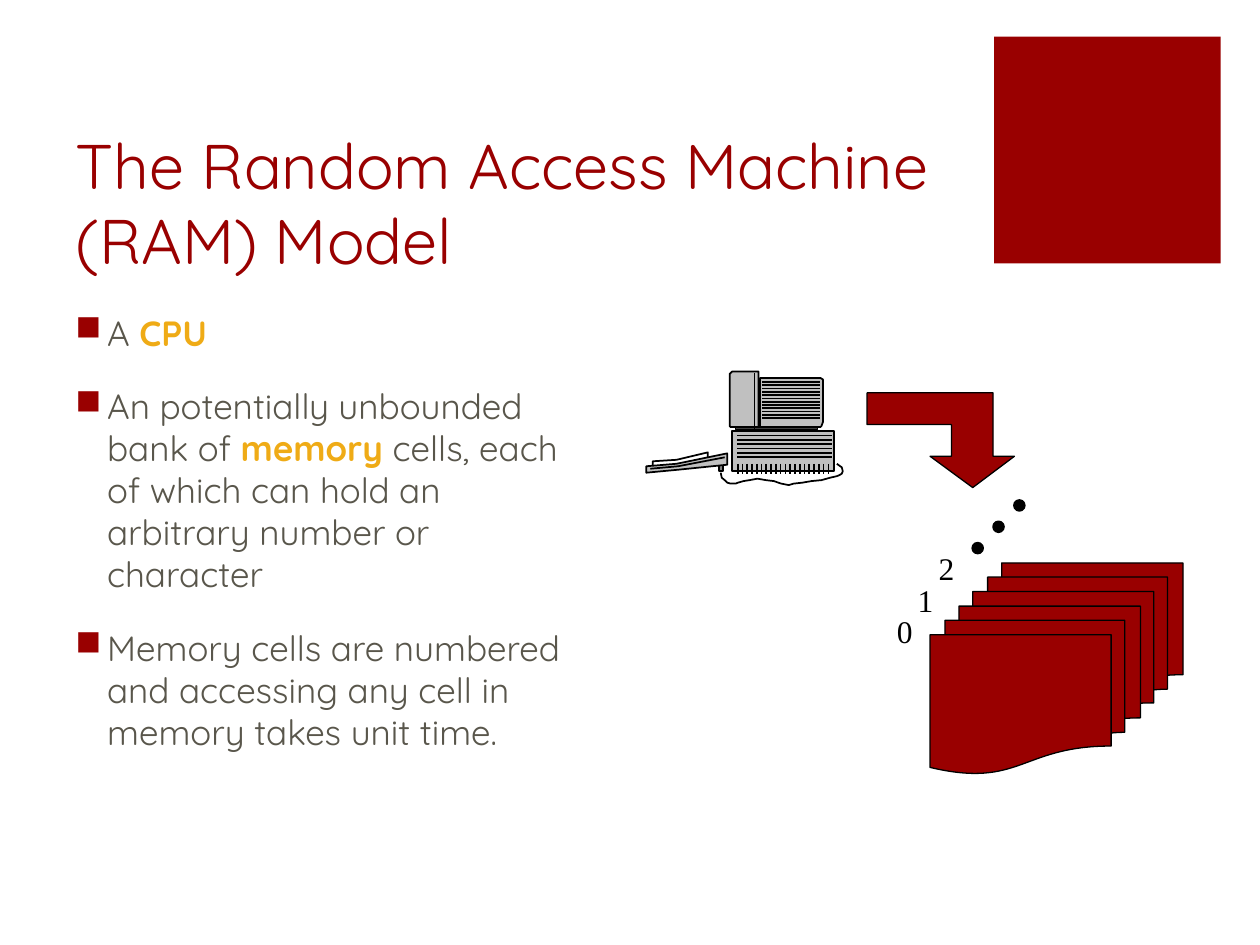
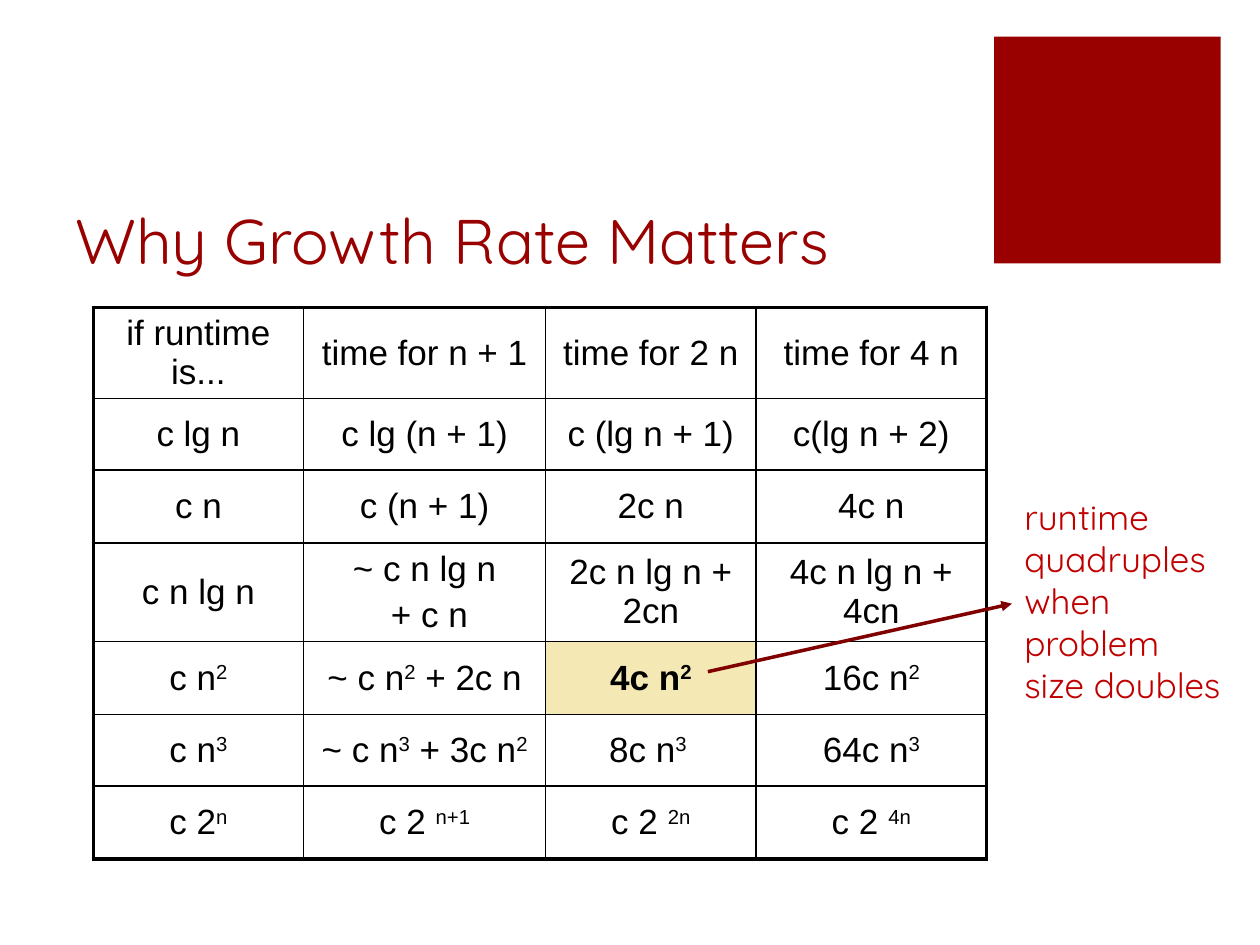
from lxml import etree
from pptx import Presentation
from pptx.dml.color import RGBColor
from pptx.enum.shapes import MSO_CONNECTOR, MSO_SHAPE
from pptx.enum.text import MSO_ANCHOR, MSO_AUTO_SIZE, PP_ALIGN
from pptx.oxml.ns import qn
from pptx.util import Cm, Pt

RECT = MSO_SHAPE.RECTANGLE
OVAL = MSO_SHAPE.OVAL
DOCUMENTS = MSO_SHAPE.FLOWCHART_MULTIDOCUMENT
STRAIGHT = MSO_CONNECTOR.STRAIGHT
LEFT, CENTER = PP_ALIGN.LEFT, PP_ALIGN.CENTER
TOP, MIDDLE, BOTTOM = MSO_ANCHOR.TOP, MSO_ANCHOR.MIDDLE, MSO_ANCHOR.BOTTOM
NO_AUTOFIT = MSO_AUTO_SIZE.NONE

TITLE_ONLY = 5
FONT = "Quicksand"
COLORS = {
    "red": "990000", "note": "C00000", "arrow": "800000",
    "body": "59564B", "key": "EFAB16", "highlight": "F4E8B4",
    "black": "000000", "white": "FFFFFF",
    "silver": "C0C0C0", "gray": "808080", "dark": "3F3F3F",
}


def rgb(name):
    return RGBColor.from_string(COLORS[name])


def add_xml(parent, tag, **attrs):
    return etree.SubElement(parent, qn(tag), attrs)


def add_color(parent, name):
    add_xml(parent, "a:srgbClr", val=COLORS[name])


def write(tf, paragraphs, size=20, font=FONT, color="black", bold=False,
          align=LEFT, before=0, bullet=None, marked=None):
    """Fill a text frame; parts between bars take the format in marked."""
    for i, text in enumerate(paragraphs):
        p = tf.add_paragraph() if i else tf.paragraphs[0]
        p.alignment = align
        p.space_before = Pt(before)
        if bullet:
            pPr = p._p.get_or_add_pPr()
            pPr.set("marL", str(Cm(0.64)))
            pPr.set("indent", str(-Cm(0.64)))
            add_color(add_xml(pPr, "a:buClr"), "red")
            add_xml(pPr, "a:buChar", char=bullet)
        for j, part in enumerate(text.split("|")):
            if not part:
                continue
            look = {"color": color, "bold": bold}
            if j % 2:
                look.update(marked or {})
            r = p.add_run()
            r.text = part
            r.font.name = font
            r.font.size = Pt(size)
            r.font.bold = look["bold"]
            r.font.color.rgb = rgb(look["color"])
            if "baseline" in look:
                r._r.get_or_add_rPr().set("baseline", str(look["baseline"]))


class Deck:
    def __init__(self):
        self.prs = Presentation()
        self.prs.slide_width, self.prs.slide_height = Cm(25.4), Cm(19.05)
        self.s = None

    def slide(self, title):
        self.s = self.prs.slides.add_slide(self.prs.slide_layouts[TITLE_ONLY])
        self.shape(RECT, 20.04, 0.74, 4.57, 4.57, "red")
        sp = self.s.shapes.title
        sp.left, sp.top, sp.width, sp.height = Cm(1.27), Cm(2.54), Cm(18.08), Cm(3.18)
        tf = sp.text_frame
        tf.auto_size = NO_AUTOFIT
        tf.vertical_anchor = BOTTOM
        write(tf, [title], size=36, color="red")

    def paint(self, sp, fill, line):
        sp.shadow.inherit = False
        if fill:
            sp.fill.solid()
            sp.fill.fore_color.rgb = rgb(fill)
        else:
            sp.fill.background()
        if line:
            sp.line.color.rgb = rgb("black")
            sp.line.width = Pt(line)
        else:
            sp.line.fill.background()

    def shape(self, kind, x, y, w, h, fill, line=None):
        sp = self.s.shapes.add_shape(kind, Cm(x), Cm(y), Cm(w), Cm(h))
        self.paint(sp, fill, line)

    def outline(self, points, fill=None, line=1):
        """Draw a freeform, closed when it is filled."""
        start, *rest = [(Cm(x), Cm(y)) for x, y in points]
        builder = self.s.shapes.build_freeform(*start)
        builder.add_line_segments(rest, close=bool(fill))
        self.paint(builder.convert_to_shape(), fill, line)

    def line(self, x1, y1, x2, y2, color="black", width=1, arrow=False):
        cx = self.s.shapes.add_connector(STRAIGHT, Cm(x1), Cm(y1), Cm(x2), Cm(y2))
        cx.line.color.rgb = rgb(color)
        cx.line.width = Pt(width)
        if arrow:
            add_xml(cx.line._get_or_add_ln(), "a:tailEnd", type="triangle")
        add_xml(cx._element.spPr, "a:effectLst")

    def hatch(self, x1, y1, x2, y2, count, dx=0, dy=0):
        """Repeat a line count times, spread evenly over dx and dy."""
        for i in range(count):
            mx, my = dx * i / (count - 1), dy * i / (count - 1)
            self.line(x1 + mx, y1 + my, x2 + mx, y2 + my)

    def text(self, x, y, w, h, paragraphs, **fmt):
        tf = self.s.shapes.add_textbox(Cm(x), Cm(y), Cm(w), Cm(h)).text_frame
        tf.word_wrap = True
        tf.vertical_anchor = TOP
        write(tf, paragraphs, **fmt)

    def table(self, x, y, widths, heights, rows, highlight):
        n_rows, n_cols = len(rows), len(widths)
        table = self.s.shapes.add_table(n_rows, n_cols, Cm(x), Cm(y),
                                        Cm(sum(widths)), Cm(sum(heights))).table
        table.first_row = table.horz_banding = False
        for column, width in zip(table.columns, widths):
            column.width = Cm(width)
        for row, height in zip(table.rows, heights):
            row.height = Cm(height)
        for i, row in enumerate(rows):
            for j, text in enumerate(row):
                cell = table.cell(i, j)
                cell.vertical_anchor = MIDDLE
                edges = {"L": j == 0, "R": j == n_cols - 1,
                         "T": i == 0, "B": i == n_rows - 1}
                for side, outer in edges.items():
                    ln = add_xml(cell._tc.get_or_add_tcPr(), f"a:ln{side}",
                                 w=str(Pt(2.25 if outer else 1)))
                    add_color(add_xml(ln, "a:solidFill"), "black")
                special = (i, j) == highlight
                cell.fill.solid()
                cell.fill.fore_color.rgb = rgb("highlight" if special else "white")
                write(cell.text_frame, text.split("\n"), font="Arial", bold=special,
                      align=CENTER, before=4, marked={"baseline": 30000})


def draw_keyboard(deck):
    deck.outline([(13.16, 9.3), (13.64, 9.27), (14.27, 9.12), (14.27, 9.32),
                  (13.61, 9.42), (13.16, 9.42)], "white")
    deck.shape(RECT, 14.5, 9.35, 0.08, 0.15, "gray", 1)
    deck.outline([(14.66, 9.14), (13.64, 9.35), (13.03, 9.4), (13.03, 9.53),
                  (13.67, 9.47), (14.66, 9.37)], "silver")
    deck.outline([(13.11, 9.45), (13.67, 9.4), (14.61, 9.22)])
    cable = [(14.53, 9.53), (14.55, 9.63), (14.61, 9.68), (14.66, 9.73),
             (14.73, 9.75), (14.83, 9.75), (14.88, 9.73), (14.99, 9.7),
             (15.11, 9.68), (15.27, 9.65), (15.44, 9.68), (15.6, 9.7),
             (15.75, 9.75), (15.9, 9.78), (16, 9.75), (16.18, 9.73),
             (16.36, 9.7), (16.56, 9.68), (16.74, 9.63), (16.87, 9.6),
             (16.92, 9.58), (16.97, 9.55), (16.99, 9.5), (16.97, 9.42),
             (16.94, 9.4), (16.87, 9.35)]
    deck.outline(cable)


def draw_case_and_monitor(deck):
    deck.shape(RECT, 14.76, 8.69, 2.06, 0.81, "silver", 1)
    deck.hatch(14.86, 8.78, 16.78, 8.78, 6, dy=0.44)
    deck.hatch(14.87, 9.35, 14.87, 9.55, 20, dx=1.83)
    deck.shape(RECT, 14.83, 8.61, 1.65, 0.05, "dark", 1)
    deck.outline([(15.32, 8.61), (16.54, 8.61), (16.56, 8.59), (16.59, 8.51),
                  (16.59, 7.7), (16.59, 7.65), (16.54, 7.62), (15.32, 7.62)], "silver")
    deck.hatch(15.37, 7.7, 16.54, 7.7, 12, dy=0.73)
    deck.outline([(15.29, 7.49), (15.29, 8.61), (14.73, 8.61), (14.71, 8.59),
                  (14.71, 7.54), (14.73, 7.52), (14.76, 7.49)], "silver")
    deck.line(15.21, 7.52, 15.21, 8.66)


def draw_memory(deck):
    for x, y in [(19.61, 11.35), (18.75, 12.22)]:
        deck.shape(DOCUMENTS, x, y, 4.24, 3.38, "red", 0.75)
    for i in range(3):
        deck.text(17.83 + 0.42 * i, 12.22 - 0.64 * i, 0.94, 1.27, [str(i)],
                  size=18, font="Times New Roman")
    for i in range(3):
        deck.shape(OVAL, 19.61 + 0.42 * i, 10.95 - 0.43 * i, 0.2, 0.2, "black", 1.5)
    deck.outline([(19.61, 9.83), (18.75, 9.2), (19.18, 9.2), (19.18, 8.56),
                  (17.48, 8.56), (17.48, 7.92), (20.02, 7.92), (20.02, 9.2),
                  (20.45, 9.2)], "red", 0.75)


def ram_model_slide(deck):
    deck.slide("The Random Access Machine (RAM) Model")
    deck.text(1.27, 6.15, 10.82, 10.87, [
        "A |CPU|",
        "An potentially unbounded bank of |memory| cells, each of which can hold "
        "an arbitrary number or character",
        "Memory cells are numbered and accessing any cell in memory takes unit time.",
    ], color="body", before=18, bullet="■", marked={"color": "key", "bold": True})
    draw_keyboard(deck)
    draw_case_and_monitor(deck)
    draw_memory(deck)


def growth_rate_slide(deck):
    deck.slide("Why Growth Rate Matters")
    rows = [
        ["if runtime is...", "time for n + 1", "time for 2 n", "time for 4 n"],
        ["c lg n", "c lg (n + 1)", "c (lg n + 1)", "c(lg n + 2)"],
        ["c n", "c (n + 1)", "2c n", "4c n"],
        ["c n lg n", "~ c n lg n\n + c n", "2c n lg n + 2cn", "4c n lg n + 4cn"],
        ["c n|2|", "~ c n|2| + 2c n", "4c n|2|", "16c n|2|"],
        ["c n|3|", "~ c n|3| + 3c n|2|", "8c n|3 |", "64c n|3|"],
        ["c 2|n|", "c 2 |n+1|", "c 2 |2n|", "c 2 |4n|"],
    ]
    deck.table(1.88, 6.2, [4.24, 4.88, 4.24, 4.65],
               [1.8, 1.45, 1.47, 1.98, 1.47, 1.45, 1.47], rows, highlight=(4, 2))
    deck.text(20.4, 9.86, 5, 4.52,
              ["runtime", "quadruples", "when problem", "size doubles"], color="note")
    deck.line(14.27, 13.54, 20.4, 12.17, "arrow", 2, arrow=True)


def main():
    deck = Deck()
    ram_model_slide(deck)
    growth_rate_slide(deck)
    deck.prs.save("out.pptx")


if __name__ == "__main__":
    main()
